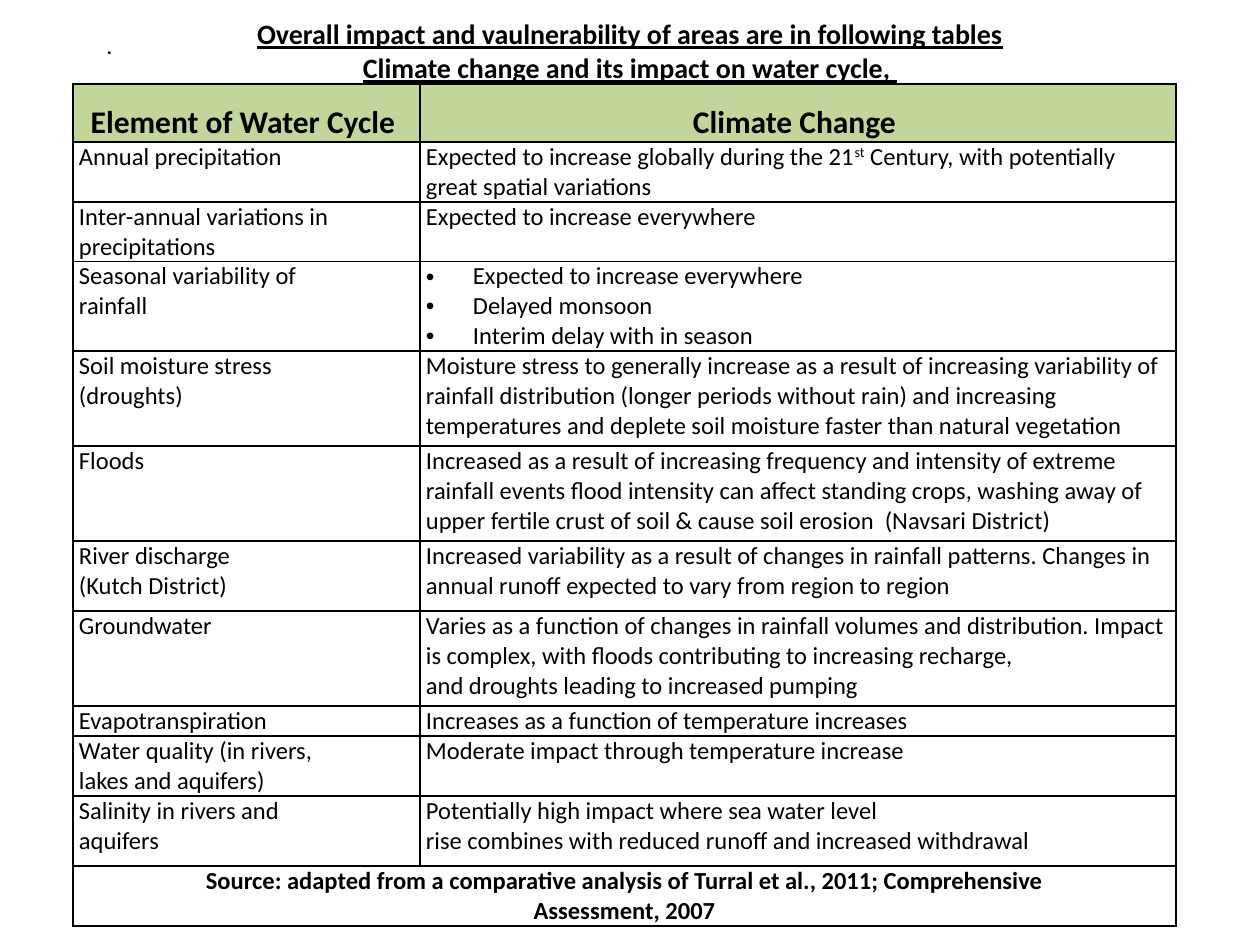
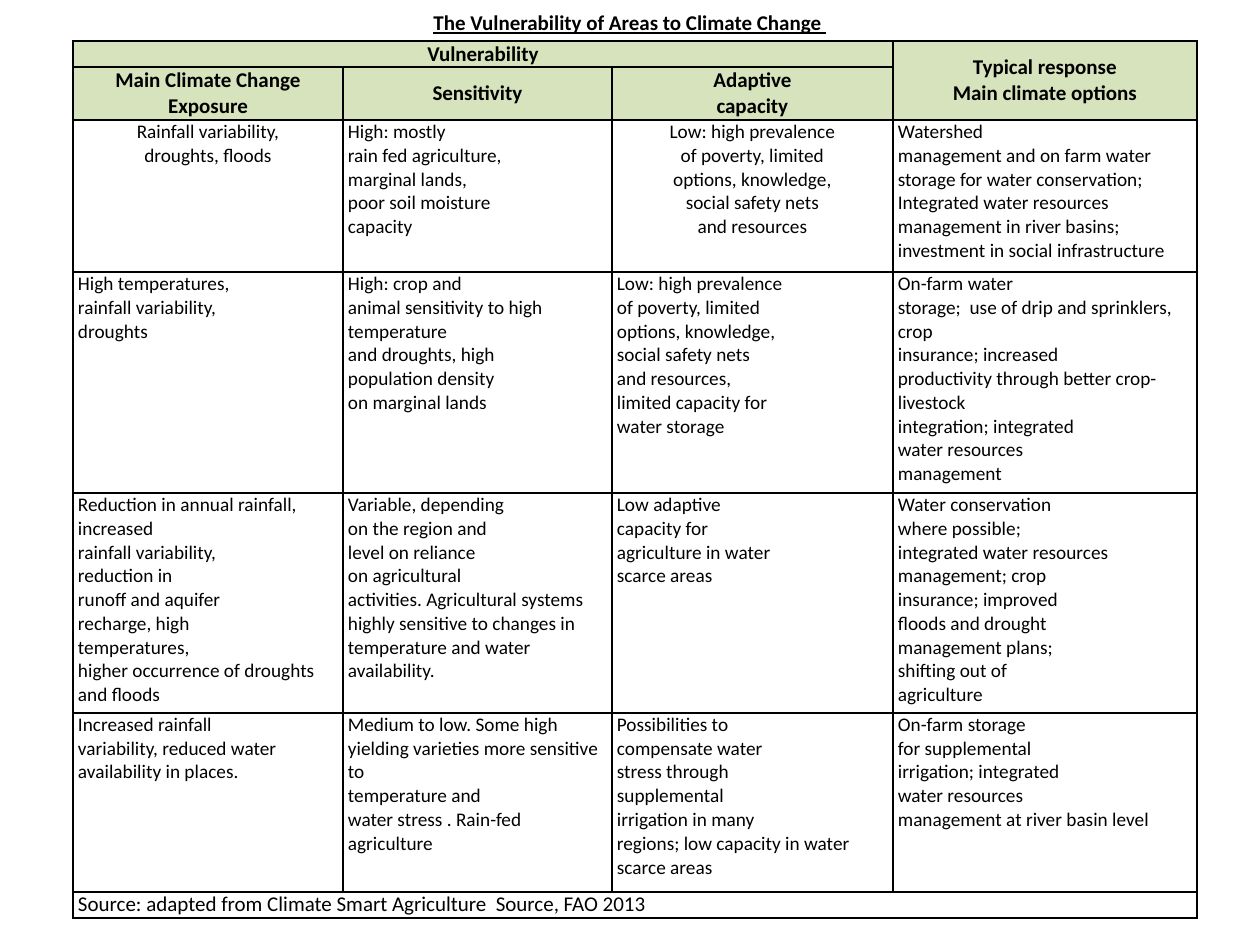
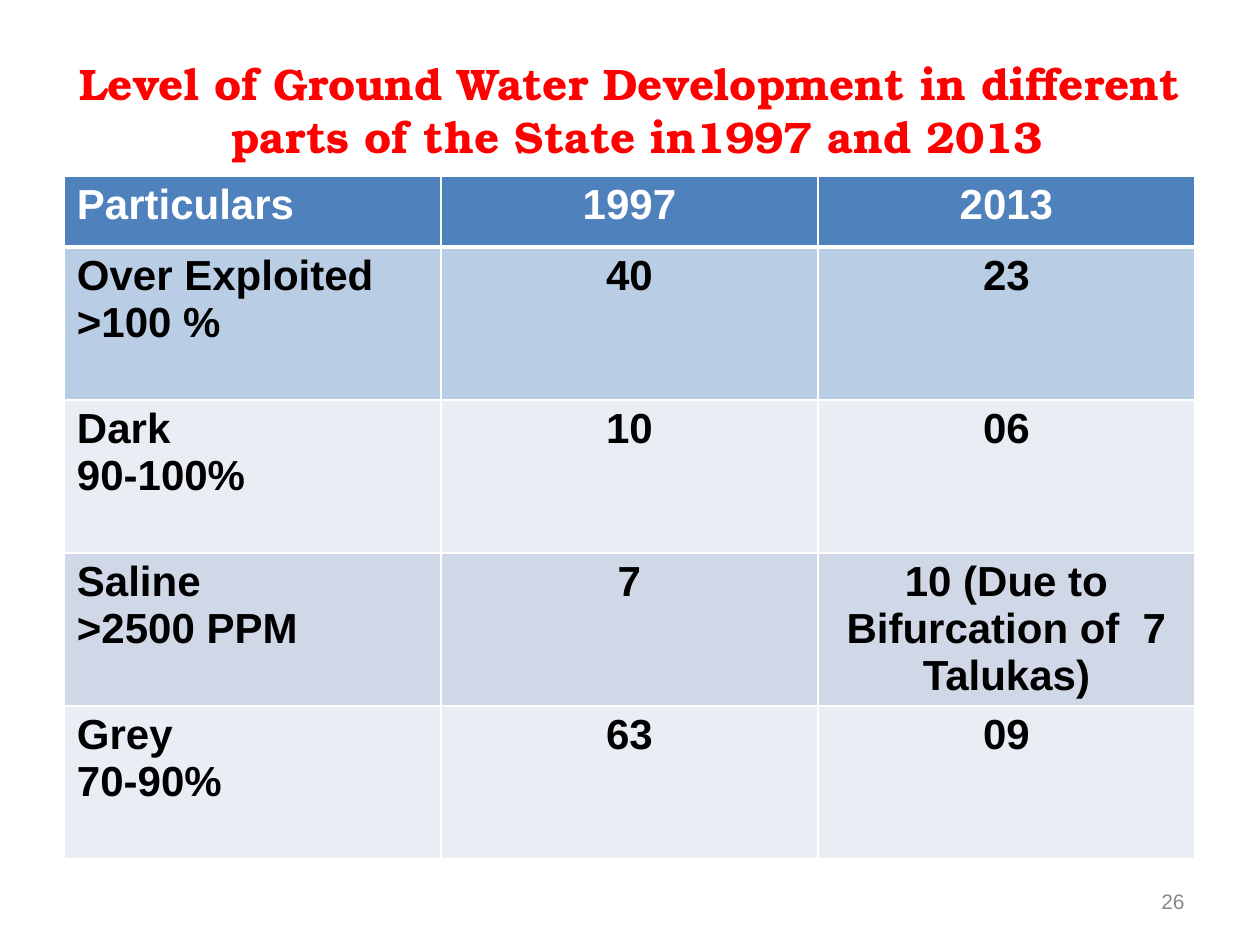
import pptx
import pptx.util
import pptx.dml.color
import pptx.enum.text
import pptx.oxml
from pptx.oxml.ns import qn
from lxml import etree

INK, PAPER, RED, GREY = "000000", "FFFFFF", "FF0000", "898989"
MOSS, LEAF = "C2D69B", "D6E3BC"
BLUE, TINTS = "4F81BD", ("B9CDE5", "E9EDF4", "D0D8E8", "E9EDF4")
SANS, PLAIN, SERIF = "Calibri", "Arial", "TeX Gyre Bonum"
UNIT = 914400 / 126
ALIGN = pptx.enum.text.PP_ALIGN
ANCHOR = pptx.enum.text.MSO_ANCHOR

CYCLE = [
    ("Element of Water Cycle ", "Climate Change "),
    ("Annual precipitation",
     "Expected to increase globally during the 21^st^ Century, with potentially great spatial variations"),
    ("Inter-annual variations in precipitations", "Expected to increase everywhere"),
    ("Seasonal variability of\nrainfall",
     "•Expected to increase everywhere\n•Delayed monsoon\n•Interim delay with in season"),
    ("Soil moisture stress\n(droughts)",
     "Moisture stress to generally increase as a result of increasing variability of rainfall "
     "distribution (longer periods without rain) and increasing temperatures and deplete soil "
     "moisture faster than natural vegetation"),
    ("Floods",
     "Increased as a result of increasing frequency and intensity of extreme rainfall events "
     "flood intensity can affect standing crops, washing away of upper fertile crust of soil "
     "& cause soil erosion  (Navsari District)"),
    ("River discharge\n(Kutch District)",
     "Increased variability as a result of changes in rainfall patterns. "
     "Changes in annual runoff expected to vary from region to region"),
    ("Groundwater",
     "Varies as a function of changes in rainfall volumes and distribution. Impact is complex, "
     "with floods contributing to increasing recharge,\nand droughts leading to increased pumping"),
    ("Evapotranspiration", "Increases as a function of temperature increases"),
    ("Water quality (in rivers,\nlakes and aquifers)", "Moderate impact through temperature increase"),
    ("Salinity in rivers and\naquifers",
     "Potentially high impact where sea water level\n"
     "rise combines with reduced runoff and increased withdrawal"),
    ("Source: adapted from a comparative analysis of Turral et al., 2011; Comprehensive\n"
     "Assessment, 2007", ""),
]

AREAS = [
    ("Vulnerability", "", "", "Typical response\nMain climate options"),
    ("Main Climate Change Exposure", "Sensitivity", "Adaptive\ncapacity", ""),
    ("Rainfall variability,\ndroughts, floods",
     "High: mostly\nrain fed agriculture,\nmarginal lands,\npoor soil moisture\ncapacity",
     "Low: high prevalence\nof poverty, limited\noptions, knowledge,\nsocial safety nets\nand resources",
     "Watershed\nmanagement and on farm water storage for water conservation;\n"
     "Integrated water resources\n"
     "management in river basins; investment in social infrastructure"),
    ("High temperatures,\nrainfall variability,\ndroughts",
     "High: crop and\nanimal sensitivity to high temperature\nand droughts, high\n"
     "population density\non marginal lands",
     "Low: high prevalence\nof poverty, limited\noptions, knowledge,\nsocial safety nets\n"
     "and resources,\nlimited capacity for\nwater storage",
     "On-farm water\nstorage;  use of drip and sprinklers, crop\ninsurance; increased\n"
     "productivity through better crop-livestock\nintegration; integrated\n"
     "water resources\nmanagement"),
    ("Reduction in annual rainfall, increased\nrainfall variability,\nreduction in\n"
     "runoff and aquifer\nrecharge, high\ntemperatures,\nhigher occurrence of droughts and floods",
     "Variable, depending\non the region and\nlevel on reliance\non agricultural\n"
     "activities. Agricultural systems highly sensitive to changes in temperature "
     "and water availability.",
     "Low adaptive\ncapacity for\nagriculture in water\nscarce areas",
     "Water conservation\nwhere possible;\nintegrated water resources\nmanagement; crop\n"
     "insurance; improved\nfloods and drought\nmanagement plans;\nshifting out of\nagriculture"),
    ("Increased rainfall\nvariability, reduced water availability in places.",
     "Medium to low. Some high yielding varieties more sensitive to\ntemperature and\n"
     "water stress . Rain-fed agriculture",
     "Possibilities to\ncompensate water\nstress through\nsupplemental\nirrigation in many\n"
     "regions; low capacity in water scarce areas",
     "On-farm storage\nfor supplemental\nirrigation; integrated\nwater resources\n"
     "management at river basin level"),
    ("Source: adapted from Climate Smart Agriculture  Source, FAO 2013", "", "", ""),
]

LEVELS = [
    ("Particulars", "1997", "2013"),
    ("Over Exploited\n>100 %", "40", "23"),
    ("Dark\n90-100%", "10", "06"),
    ("Saline\n>2500 PPM", "7", "10 (Due to Bifurcation of  7 Talukas)"),
    ("Grey\n70-90%", "63", "09"),
]


def px(n):
    return pptx.util.Emu(round(n * UNIT))


def tint(code):
    return pptx.dml.color.RGBColor.from_string(code)


def bullet(para):
    prop = para._p.get_or_add_pPr()
    prop.set("marL", str(px(47)))
    prop.set("indent", str(-px(47)))
    etree.SubElement(prop, qn("a:buFont")).set("typeface", PLAIN)
    etree.SubElement(prop, qn("a:buChar")).set("char", "•")


def write(frame, text, size, face=SANS, ink=INK, bold=False, line=False,
          align=ALIGN.LEFT, space=None):
    for i, row in enumerate(text.split("\n")):
        para = frame.paragraphs[0] if i == 0 else frame.add_paragraph()
        para.alignment = align
        if space:
            para.line_spacing = space
        font = para.font
        font.size, font.name = pptx.util.Pt(size), face
        font.bold, font.underline = bold, line
        font.color.rgb = tint(ink)
        if row.startswith("•"):
            bullet(para)
        for k, part in enumerate(row.lstrip("•").split("^")):
            run = para.add_run()
            run.text = part
            if k % 2:
                run._r.get_or_add_rPr().set("baseline", "30000")


def place(shape, box):
    shape.left, shape.top, shape.width, shape.height = map(px, box)


def title(slide, text, box, size, anchor=ANCHOR.MIDDLE, foot=6, **look):
    head = slide.shapes.title
    place(head, box)
    frame = head.text_frame
    frame.auto_size = pptx.enum.text.MSO_AUTO_SIZE.NONE
    frame.word_wrap = True
    frame.vertical_anchor = anchor
    frame.margin_bottom = px(foot)
    write(frame, text, size, bold=True, align=ALIGN.CENTER, **look)


def note(slide, text, box, size, **look):
    frame = slide.shapes.add_textbox(*map(px, box)).text_frame
    frame.word_wrap = True
    frame.vertical_anchor = ANCHOR.MIDDLE
    write(frame, text, size, **look)


def edge(cell, ink, top=1, foot=1):
    prop = cell._tc.get_or_add_tcPr()
    for i, (side, wide) in enumerate((("L", 1), ("R", 1), ("T", top), ("B", foot))):
        line = pptx.oxml.parse_xml(
            f'<a:ln{side} xmlns:a="http://schemas.openxmlformats.org/drawingml/2006/main" '
            f'w="{wide * 12700}"><a:solidFill><a:srgbClr val="{ink}"/></a:solidFill></a:ln{side}>')
        prop.insert(i, line)


def grid(slide, data, spot, cols, rows, pad, style, ink=INK, spans=(), rule=1):
    box = (*spot, sum(cols), sum(rows))
    table = slide.shapes.add_table(len(rows), len(cols), *map(px, box)).table
    table.first_row = table.horz_banding = False
    for col, wide in zip(table.columns, cols):
        col.width = px(wide)
    for row, high in zip(table.rows, rows):
        row.height = px(high)
    for r, c, down, right in spans:
        table.cell(r, c).merge(table.cell(down, right))
    for r, row in enumerate(data):
        for c, text in enumerate(row):
            cell = table.cell(r, c)
            look = style(r, c)
            fill = look.pop("fill", None)
            if fill:
                cell.fill.solid()
                cell.fill.fore_color.rgb = tint(fill)
            else:
                cell.fill.background()
            cell.vertical_anchor = look.pop("anchor", ANCHOR.TOP)
            cell.margin_left = cell.margin_right = px(pad[0])
            cell.margin_top = cell.margin_bottom = px(pad[1])
            edge(cell, ink, rule if r == 1 else 1, rule if r == 0 else 1)
            if not cell.is_spanned:
                write(cell.text_frame, text, **look)


def cycle(r, c):
    if r == 0:
        return dict(size=18, bold=True, align=ALIGN.CENTER, space=1.5, fill=MOSS)
    if r == len(CYCLE) - 1:
        return dict(size=14, bold=True, align=ALIGN.CENTER)
    return dict(size=14)


def area(r, c):
    if r < 2:
        return dict(size=12, bold=True, align=ALIGN.CENTER, fill=LEAF, anchor=ANCHOR.MIDDLE)
    if r == len(AREAS) - 1:
        return dict(size=12)
    return dict(size=11, align=ALIGN.CENTER if r == 2 and c in (0, 2) else ALIGN.LEFT)


def level(r, c):
    return dict(size=24, face=PLAIN, bold=True, ink=INK if r else PAPER,
                fill=TINTS[r - 1] if r else BLUE,
                align=ALIGN.CENTER if c else ALIGN.LEFT)


def main():
    deck = pptx.Presentation()
    deck.slide_width, deck.slide_height = px(1260), px(945)
    one, two, three = (deck.slides.add_slide(deck.slide_layouts[5]) for _ in range(3))

    title(one, "Overall impact and vaulnerability of areas are in following tables\n"
               "Climate change and its impact on water cycle, ",
          (0, 0, 1260, 90), 16, anchor=ANCHOR.BOTTOM, line=True)
    grid(one, CYCLE, (73, 84), (347, 756),
         (58, 60, 59, 89, 95, 95, 70, 95, 30, 60, 70, 60), (6, 0), cycle,
         spans=[(11, 0, 11, 1)])
    note(one, ".", (94, 23, 1081, 43), 14)

    title(two, "The Vulnerability of Areas to Climate Change ", (0, 3, 1260, 38), 12, line=True)
    grid(two, AREAS, (73, 41), (270, 269, 281, 304),
         (26, 53, 152, 221, 220, 179, 26), (5, 0), area,
         spans=[(0, 0, 0, 2), (0, 3, 1, 3), (6, 0, 6, 3)])

    title(three, "Level of Ground Water Development in different  parts of the State in1997 and 2013",
          (63, 76, 1134, 119), 25.2, foot=59, face=SERIF, ink=RED)
    grid(three, LEVELS, (64, 176), [377] * 3, [71] + [153] * 4, (13, 6), level,
         ink=PAPER, rule=3)
    note(three, "26", (903, 876, 294, 50), 12, face=PLAIN, ink=GREY, align=ALIGN.RIGHT)
    deck.save("out.pptx")


if __name__ == "__main__":
    main()
